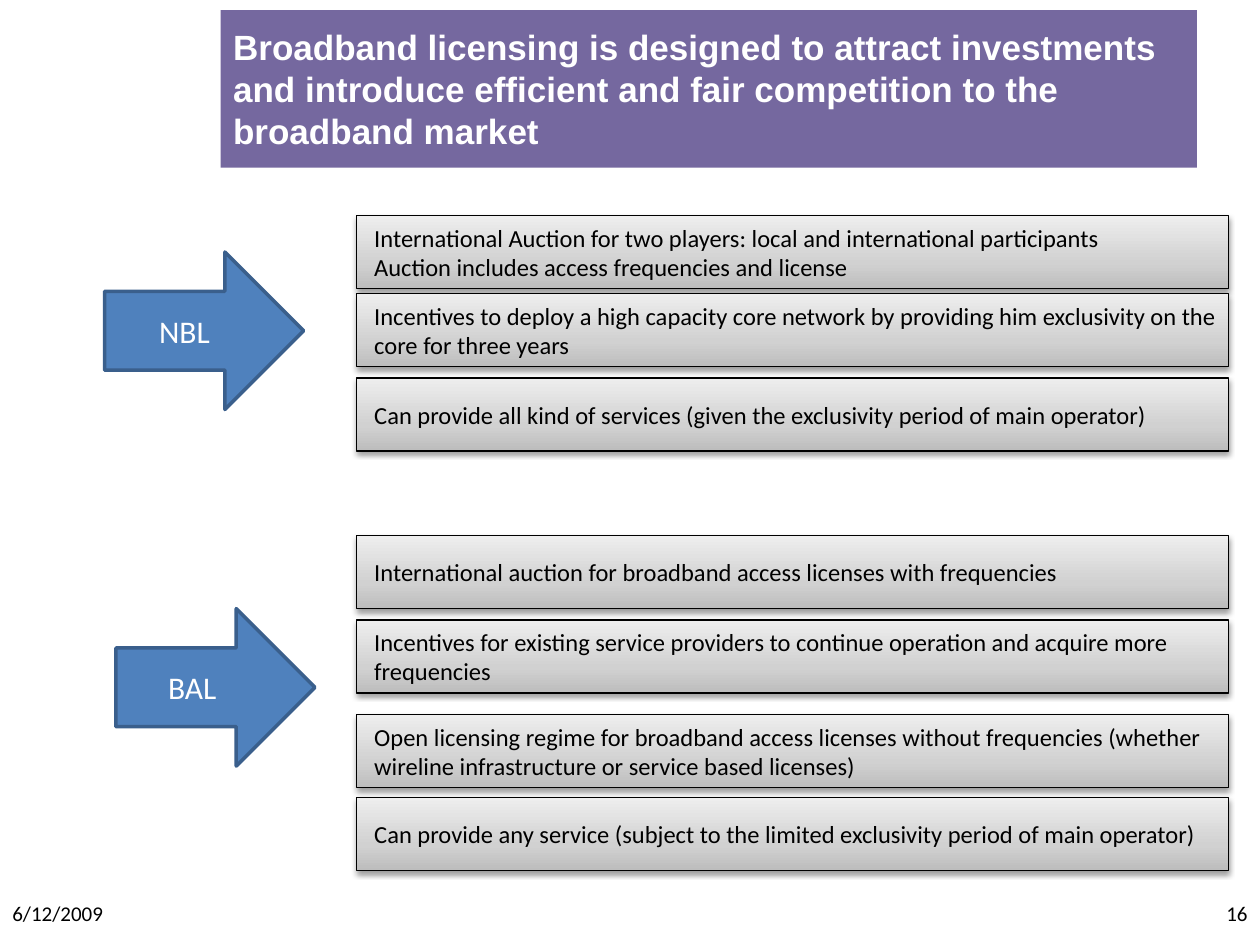
from copy import deepcopy
from lxml.etree import fromstring
from pptx import Presentation
from pptx.dml.color import RGBColor
from pptx.enum.shapes import MSO_SHAPE
from pptx.enum.text import MSO_ANCHOR, MSO_AUTO_SIZE, PP_ALIGN
from pptx.oxml.ns import qn
from pptx.util import Inches, Pt

WHITE = RGBColor(0xFF, 0xFF, 0xFF)
BLACK = RGBColor(0, 0, 0)
PURPLE = RGBColor(0x75, 0x68, 0x9F)
BLUE = RGBColor(0x4F, 0x81, 0xBD)
NAVY = RGBColor(0x3A, 0x5F, 0x8C)
GRAYS = [
    (0, RGBColor(0xBD, 0xBD, 0xBD)),
    (0.35, RGBColor(0xD1, 0xD1, 0xD1)),
    (1, RGBColor(0xEE, 0xEE, 0xEE)),
]
SHADOW = (
    '<a:outerShdw xmlns:a="http://schemas.openxmlformats.org/drawingml/2006/main" '
    'blurRad="40000" dist="20000" dir="5400000" rotWithShape="0">'
    '<a:srgbClr val="000000"><a:alpha val="38000"/></a:srgbClr></a:outerShdw>'
)


def write(frame, text, size, color, align=PP_ALIGN.LEFT, name="Calibri"):
    frame.word_wrap = True
    frame.text = text
    for para in frame.paragraphs:
        para.alignment = align
        para.font.size = Pt(size)
        para.font.name = name
        para.font.color.rgb = color


def add_box(kind, left, top, width, height, line, weight):
    box = shapes.add_shape(kind, Inches(left), Inches(top), Inches(width), Inches(height))
    box.shadow.inherit = False
    box.line.color.rgb = line
    box.line.width = Pt(weight)
    box.text_frame.vertical_anchor = MSO_ANCHOR.MIDDLE
    return box


deck = Presentation()
deck.slide_width = Inches(10)
deck.slide_height = Inches(7.5)
slide = deck.slides.add_slide(deck.slide_layouts[5])
shapes = slide.shapes

title = shapes.title
title.left, title.top = Inches(1.75), Inches(0.08)
title.width, title.height = Inches(7.75), Inches(1.25)
title.fill.solid()
title.fill.fore_color.rgb = PURPLE
write(
    title.text_frame,
    "Broadband licensing is designed to attract investments and introduce "
    "efficient and fair competition to the broadband market",
    20, WHITE, name="Arial",
)
title.text_frame.auto_size = MSO_AUTO_SIZE.NONE
title.text_frame.vertical_anchor = MSO_ANCHOR.MIDDLE
title.text_frame.paragraphs[0].font.bold = True

points = [
    (1.71, "International Auction for two players: local and international participants\n"
           "Auction includes access frequencies and license"),
    (2.33, "Incentives to deploy a high capacity core network by providing him "
           "exclusivity on the core for three years"),
    (3, "Can provide all kind of services (given the exclusivity period of main operator)"),
    (4.25, "International auction for broadband access licenses with frequencies"),
    (4.92, "Incentives for existing service providers to continue operation and "
           "acquire more frequencies"),
    (5.67, "Open licensing regime for broadband access licenses without frequencies "
           "(whether wireline infrastructure or service based licenses)"),
    (6.33, "Can provide any service (subject to the limited exclusivity period of "
           "main operator)"),
]
for top, text in points:
    bar = add_box(MSO_SHAPE.RECTANGLE, 2.83, top, 6.92, 0.58, BLACK, 0.75)
    bar.fill.gradient()
    bar.fill.gradient_angle = 90
    props = bar._element.spPr
    stop = props.find(".//" + qn("a:gs"))
    stop.addnext(deepcopy(stop))
    for stop, (place, gray) in zip(bar.fill.gradient_stops, GRAYS):
        stop.position = place
        stop.color.rgb = gray
    props.find(qn("a:effectLst")).append(fromstring(SHADOW))
    frame = bar.text_frame
    frame.margin_left = frame.margin_right = Inches(0.01)
    frame.margin_top = frame.margin_bottom = Inches(0.01)
    write(frame, text, 14, BLACK)
    for para in frame.paragraphs:
        para._p.get_or_add_pPr().set("marL", str(Inches(0.13)))

for left, top, text in [(0.83, 2, "NBL"), (0.92, 4.83, "BAL ")]:
    arrow = add_box(MSO_SHAPE.RIGHT_ARROW, left, top, 1.58, 1.25, NAVY, 2)
    arrow.fill.solid()
    arrow.fill.fore_color.rgb = BLUE
    write(arrow.text_frame, text, 18, WHITE, PP_ALIGN.CENTER)

for left, text, align in [(0, "6/12/2009", PP_ALIGN.LEFT), (7.67, "16", PP_ALIGN.RIGHT)]:
    note = shapes.add_textbox(Inches(left), Inches(7.1), Inches(2.33), Inches(0.4))
    write(note.text_frame, text, 12, BLACK, align)

deck.save("out.pptx")
